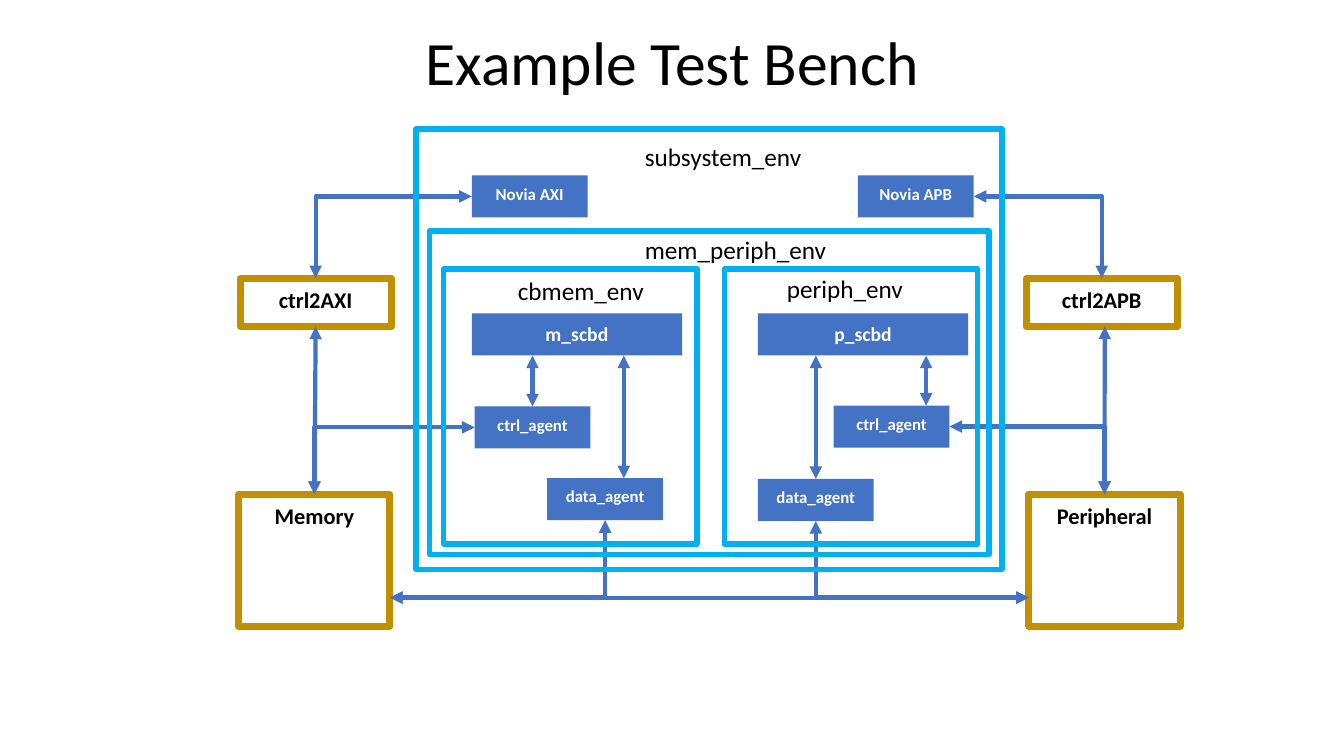
from dataclasses import dataclass

from lxml.etree import SubElement
from pptx import Presentation
from pptx.dml.color import RGBColor
from pptx.enum.shapes import MSO_CONNECTOR, MSO_SHAPE
from pptx.enum.text import MSO_ANCHOR, MSO_AUTO_SIZE, PP_ALIGN
from pptx.oxml.ns import qn
from pptx.util import Cm, Pt


@dataclass(frozen=True)
class Theme:
    font: str = "Calibri"
    black: RGBColor = RGBColor(0x00, 0x00, 0x00)
    white: RGBColor = RGBColor(0xFF, 0xFF, 0xFF)
    blue: RGBColor = RGBColor(0x44, 0x72, 0xC4)
    cyan: RGBColor = RGBColor(0x00, 0xB0, 0xF0)
    gold: RGBColor = RGBColor(0xBF, 0x90, 0x00)
    title: int = 44
    env: int = 18
    module: int = 16
    scoreboard: int = 14
    agent: int = 12


T = Theme()
TOP, LEFT, BOTTOM, RIGHT = range(4)
AGENT_W, SCOREBOARD_W, BLOCK_H = 2.92, 5.3, 1.06
MODULE_W = 3.81


def style_text(tf, text, size, color, bold=False, align=PP_ALIGN.CENTER):
    tf.text = text
    p = tf.paragraphs[0]
    p.alignment = align
    font = p.runs[0].font
    font.name, font.size, font.bold = T.font, Pt(size), bold
    font.color.rgb = color


def add_rect(s, x, y, w, h):
    sp = s.shapes.add_shape(MSO_SHAPE.RECTANGLE, Cm(x), Cm(y), Cm(w), Cm(h))
    sp.shadow.inherit = False
    return sp


def add_frame(s, x, y, w, h, color, width):
    sp = add_rect(s, x, y, w, h)
    sp.fill.background()
    sp.line.color.rgb = color
    sp.line.width = Pt(width)
    return sp


def add_env(s, x, y, w, h):
    return add_frame(s, x, y, w, h, T.cyan, 4)


def add_module(s, text, x, y, h):
    sp = add_frame(s, x, y, MODULE_W, h, T.gold, 5)
    tf = sp.text_frame
    tf.word_wrap = False
    tf.vertical_anchor = MSO_ANCHOR.TOP
    tf.margin_top = tf.margin_bottom = Cm(0.2)
    style_text(tf, text, T.module, T.black, bold=True)
    return sp


def add_block(s, text, x, y, w=AGENT_W, size=T.agent):
    sp = add_rect(s, x, y, w, BLOCK_H)
    sp.fill.solid()
    sp.fill.fore_color.rgb = T.blue
    sp.line.fill.background()
    tf = sp.text_frame
    tf.word_wrap = True
    tf.vertical_anchor = MSO_ANCHOR.TOP
    tf.margin_left = tf.margin_right = Cm(0.3)
    tf.margin_top = tf.margin_bottom = Cm(0.2)
    style_text(tf, text, size, T.white, bold=True)
    return sp


def add_label(s, text, x, y, w):
    tf = s.shapes.add_textbox(Cm(x), Cm(y), Cm(w), Cm(1.02)).text_frame
    tf.word_wrap = False
    tf.auto_size = MSO_AUTO_SIZE.SHAPE_TO_FIT_TEXT
    style_text(tf, text, T.env, T.black, align=PP_ALIGN.LEFT)


def add_title(s, text):
    tf = s.shapes.add_textbox(Cm(2.34), Cm(0.53), Cm(29.21), Cm(2.26)).text_frame
    tf.word_wrap = True
    tf.vertical_anchor = MSO_ANCHOR.MIDDLE
    style_text(tf, text, T.title, T.black)
    tf.paragraphs[0].line_spacing = 0.9


def locate(end):
    """Return the point of a free end (x, y) or a joined end (shape, side)."""
    sp, side = end
    if isinstance(sp, (int, float)):
        return Cm(sp), Cm(side)
    mid_x, mid_y = sp.left + sp.width // 2, sp.top + sp.height // 2
    return {TOP: (mid_x, sp.top), LEFT: (sp.left, mid_y),
            BOTTOM: (mid_x, sp.top + sp.height),
            RIGHT: (sp.left + sp.width, mid_y)}[side]


def add_link(s, start, end, corner=False):
    """Double arrow; a corner link runs across first, then up or down."""
    kind = MSO_CONNECTOR.ELBOW if corner else MSO_CONNECTOR.STRAIGHT
    c = s.shapes.add_connector(kind, *locate(start), *locate(end))
    for join, (sp, side) in ((c.begin_connect, start), (c.end_connect, end)):
        if not isinstance(sp, (int, float)):
            join(sp, side)
    c.line.color.rgb = T.blue
    c.line.width = Pt(3)
    sp_pr = c._element.spPr
    if corner:
        sp_pr.find(qn("a:prstGeom")).set("prst", "bentConnector2")
    ln = sp_pr.find(qn("a:ln"))
    for tag in ("a:headEnd", "a:tailEnd"):
        SubElement(ln, qn(tag), type="triangle")
    SubElement(sp_pr, qn("a:effectLst"))


def main():
    prs = Presentation()
    prs.slide_width, prs.slide_height = Cm(33.87), Cm(19.05)
    s = prs.slides.add_slide(prs.slide_layouts[6])
    add_title(s, "Example Test Bench")

    # Modules at both sides
    memory = add_module(s, "Memory", 6.02, 12.45, 3.33)
    peripheral = add_module(s, "Peripheral", 25.93, 12.45, 3.33)
    ctrl2axi = add_module(s, "ctrl2AXI", 6.05, 7.01, 1.22)
    ctrl2apb = add_module(s, "ctrl2APB", 25.86, 7.01, 1.22)

    # Scoreboards, agents and bus models
    add_block(s, "m_scbd", 11.89, 7.9, SCOREBOARD_W, T.scoreboard)
    m_ctrl = add_block(s, "ctrl_agent", 11.96, 10.24)
    m_data = add_block(s, "data_agent", 13.79, 12.05)
    add_block(s, "p_scbd", 19.1, 7.9, SCOREBOARD_W, T.scoreboard)
    p_ctrl = add_block(s, "ctrl_agent", 21.01, 10.22)
    p_data = add_block(s, "data_agent", 19.1, 12.07)
    axi = add_block(s, "Novia AXI", 11.89, 4.42)
    apb = add_block(s, "Novia APB", 21.62, 4.42)

    # Links between scoreboards and agents
    scbd_y = 8.96
    add_link(s, (m_ctrl, TOP), (13.42, scbd_y))
    add_link(s, (15.72, 12.05), (15.72, scbd_y))
    add_link(s, (23.34, 10.22), (23.34, scbd_y))
    add_link(s, (p_data, TOP), (20.56, scbd_y))

    # Links from agents and bus models to the modules
    add_link(s, (m_ctrl, LEFT), (memory, TOP), corner=True)
    add_link(s, (p_ctrl, RIGHT), (peripheral, TOP), corner=True)
    add_link(s, (axi, LEFT), (ctrl2axi, TOP), corner=True)
    add_link(s, (apb, RIGHT), (ctrl2apb, TOP), corner=True)
    add_link(s, (memory, TOP), (ctrl2axi, BOTTOM))
    add_link(s, (peripheral, TOP), (27.84, 8.23))

    # Data path along the bottom
    memory_port, peripheral_port = (9.83, 15.06), (25.93, 15.06)
    add_link(s, memory_port, peripheral_port)
    add_link(s, memory_port, (m_data, BOTTOM), corner=True)
    add_link(s, peripheral_port, (p_data, BOTTOM), corner=True)

    # Nested environments
    for x in (11.18, 18.26):
        add_env(s, x, 6.78, 6.38, 6.93)
    add_env(s, 10.82, 5.82, 14.1, 8.15)
    add_env(s, 10.49, 3.25, 14.76, 11.1)
    add_label(s, "cbmem_env", 12.8, 6.81, 3.73)
    add_label(s, "periph_env", 19.58, 6.76, 3.48)
    add_label(s, "mem_periph_env", 16, 5.77, 5.13)
    add_label(s, "subsystem_env", 16, 3.43, 4.5)

    prs.save("out.pptx")


if __name__ == "__main__":
    main()
